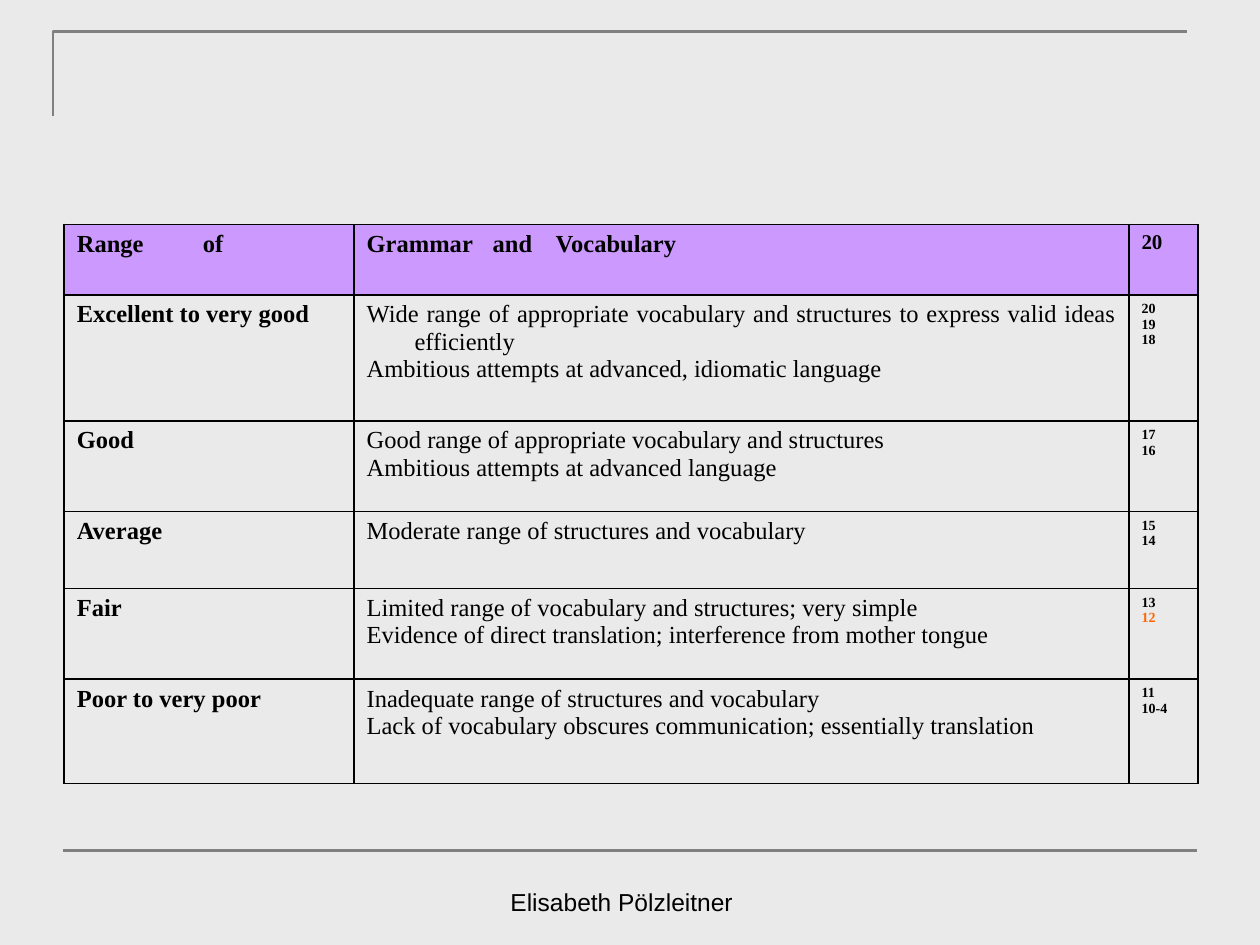
from dataclasses import dataclass

from pptx import Presentation
from pptx.dml.color import RGBColor
from pptx.enum.shapes import MSO_CONNECTOR
from pptx.enum.text import MSO_ANCHOR as Anchor, PP_ALIGN as Align
from pptx.oxml import parse_xml
from pptx.oxml.ns import nsdecls
from pptx.util import Emu, Pt

PX = 9144  # EMU per px, 100 px to the inch
COLORS = {
    "background": "EAEAEA",
    "rule": "808080",
    "text": "000000",
    "border": "000000",
    "header": "CC99FF",
    "highlight": "FF6600",
}
SERIF, SANS = "Times New Roman", "Arial"
COLUMNS = [230, 615, 55]
HANGING = 38


@dataclass
class Band:
    name: str
    criteria: list[str]
    points: list[str]
    height: int


HEADER_HEIGHT = 56
HEADERS = [  # text, size, tab stops
    ("Range\tof", 14, [97]),
    ("Grammar\tand\tVocabulary", 14, [104, 154]),
    ("20", 12, []),
]
BANDS = [
    Band("Excellent to very good",
         ["Wide range of appropriate vocabulary and structures to express valid ideas efficiently",
          "Ambitious attempts at advanced, idiomatic language"],
         ["20", "19", "18"], 100),
    Band("Good",
         ["Good range of appropriate vocabulary and structures",
          "Ambitious attempts at advanced language"],
         ["17", "16"], 72),
    Band("Average", ["Moderate range of structures and vocabulary"], ["15", "14"], 61),
    Band("Fair",
         ["Limited range of vocabulary and structures; very simple",
          "Evidence of direct translation; interference from mother tongue"],
         ["13", "12"], 72),
    Band("Poor to very poor",
         ["Inadequate range of structures and vocabulary",
          "Lack of vocabulary obscures communication; essentially translation"],
         ["11", "10-4"], 83),
]
HIGHLIGHTED_POINTS = "12"


def px(n: int) -> Emu:
    return Emu(n * PX)


def rgb(name: str) -> RGBColor:
    return RGBColor.from_string(COLORS[name])


def style_run(r, size: int, font: str, bold: bool = False, color: str = "text") -> None:
    r.font.size, r.font.name, r.font.bold = Pt(size), font, bold
    r.font.color.rgb = rgb(color)


def style_rule(sp) -> None:
    sp.line.color.rgb = rgb("rule")
    sp.line.width = Pt(1.5)


def add_rules(slide) -> None:
    builder = slide.shapes.build_freeform(42, 92, scale=PX)
    builder.add_line_segments([(42, 25), (942, 25)], close=False)
    corner = builder.convert_to_shape()
    corner.fill.background()
    corner.shadow.inherit = False
    style_rule(corner)
    line = slide.shapes.add_connector(
        MSO_CONNECTOR.STRAIGHT, px(50), px(675), px(950), px(675))
    style_rule(line)
    line._element.spPr.append(parse_xml(f"<a:effectLst {nsdecls('a')}/>"))


def add_footer(slide, text: str) -> None:
    tf = slide.shapes.add_textbox(px(335), px(682), px(317), px(50)).text_frame
    tf.word_wrap = True
    tf.vertical_anchor = Anchor.BOTTOM
    tf.text = text
    p = tf.paragraphs[0]
    p.alignment = Align.CENTER
    style_run(p.runs[0], 14, SANS)


def add_borders(cell) -> None:
    tc_pr = cell._tc.get_or_add_tcPr()
    for i, side in enumerate("LRTB"):
        tc_pr.insert(i, parse_xml(
            f'<a:ln{side} {nsdecls("a")} w="{Pt(1)}"><a:solidFill>'
            f'<a:srgbClr val="{COLORS["border"]}"/></a:solidFill></a:ln{side}>'))


def add_tabs(p, stops: list[int]) -> None:
    tabs = "".join(f'<a:tab pos="{px(stop)}" algn="l"/>' for stop in stops)
    p._p.get_or_add_pPr().append(
        parse_xml(f"<a:tabLst {nsdecls('a')}>{tabs}</a:tabLst>"))


def fill_cell(cell, lines: list[str], size: int, bold: bool = True,
              align: Align = Align.JUSTIFY, indent: int = HANGING) -> None:
    cell.fill.background()
    add_borders(cell)
    tf = cell.text_frame
    tf.text = "\n".join(lines)
    for p in tf.paragraphs:
        p.alignment = align
        p_pr = p._p.get_or_add_pPr()
        p_pr.set("marL", str(px(indent)))
        p_pr.set("indent", str(px(-indent)))
        color = "highlight" if p.text == HIGHLIGHTED_POINTS else "text"
        for r in p.runs:
            style_run(r, size, SERIF, bold, color)


def add_grading_table(slide) -> None:
    heights = [HEADER_HEIGHT] + [band.height for band in BANDS]
    table = slide.shapes.add_table(
        len(heights), len(COLUMNS), px(51), px(178),
        px(sum(COLUMNS)), px(sum(heights))).table
    table.first_row = table.horz_banding = False
    for column, width in zip(table.columns, COLUMNS):
        column.width = px(width)
    for row, height in zip(table.rows, heights):
        row.height = px(height)

    for cell, (text, size, stops) in zip(table.rows[0].cells, HEADERS):
        fill_cell(cell, [text], size, align=Align.LEFT, indent=0)
        cell.fill.solid()
        cell.fill.fore_color.rgb = rgb("header")
        if stops:
            add_tabs(cell.text_frame.paragraphs[0], stops)
    for i, band in enumerate(BANDS, start=1):
        fill_cell(table.cell(i, 0), [band.name], 14, align=Align.LEFT)
        fill_cell(table.cell(i, 1), band.criteria, 14, bold=False)
        fill_cell(table.cell(i, 2), band.points, 8)


def main() -> None:
    prs = Presentation()
    prs.slide_width, prs.slide_height = px(1000), px(750)
    slide = prs.slides.add_slide(prs.slide_layouts[6])
    background = slide.background.fill
    background.solid()
    background.fore_color.rgb = rgb("background")
    add_rules(slide)
    add_footer(slide, "Elisabeth Pölzleitner")
    add_grading_table(slide)
    prs.save("out.pptx")


if __name__ == "__main__":
    main()
